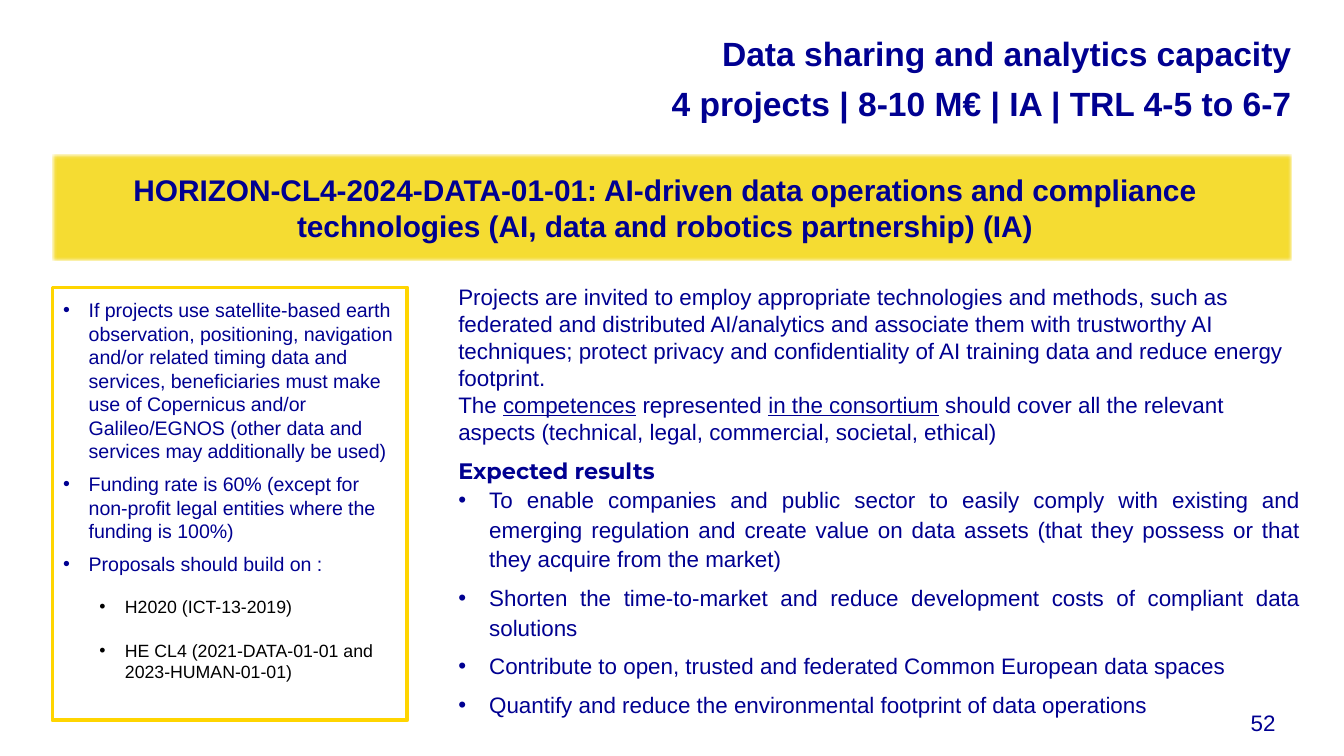
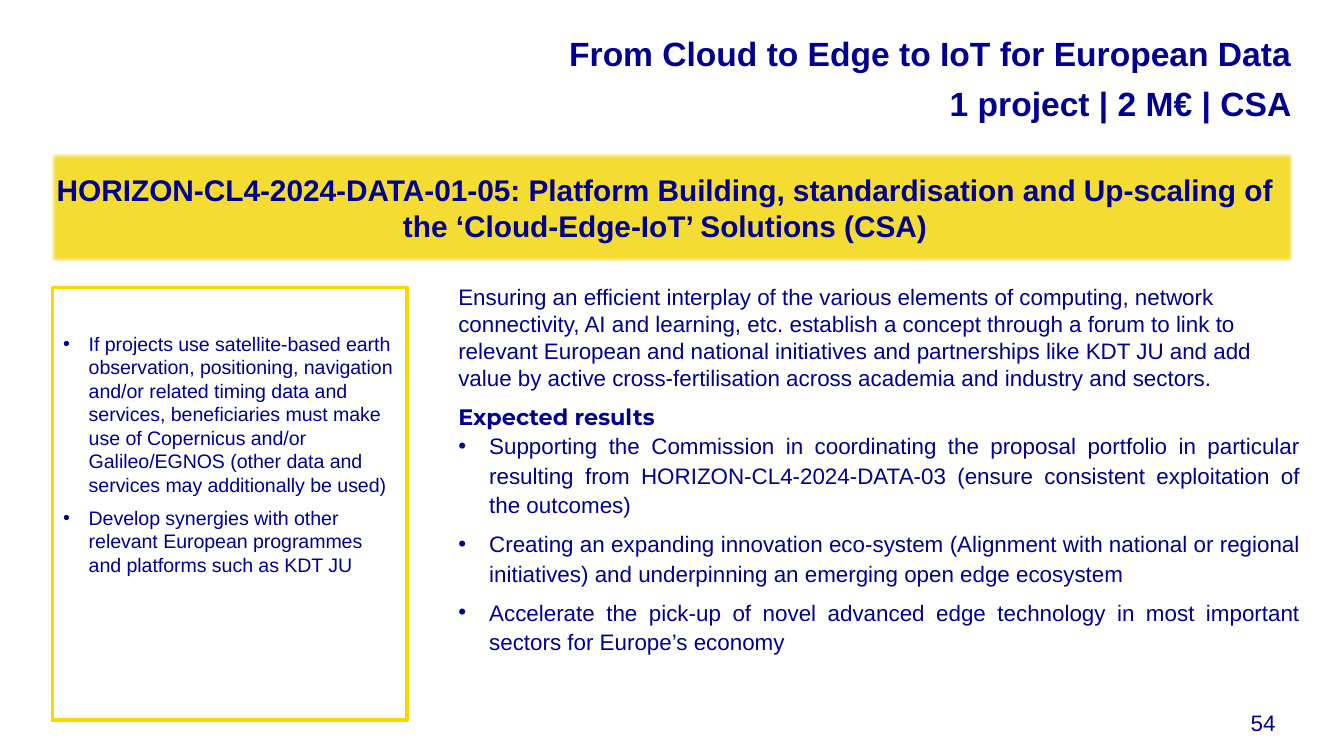
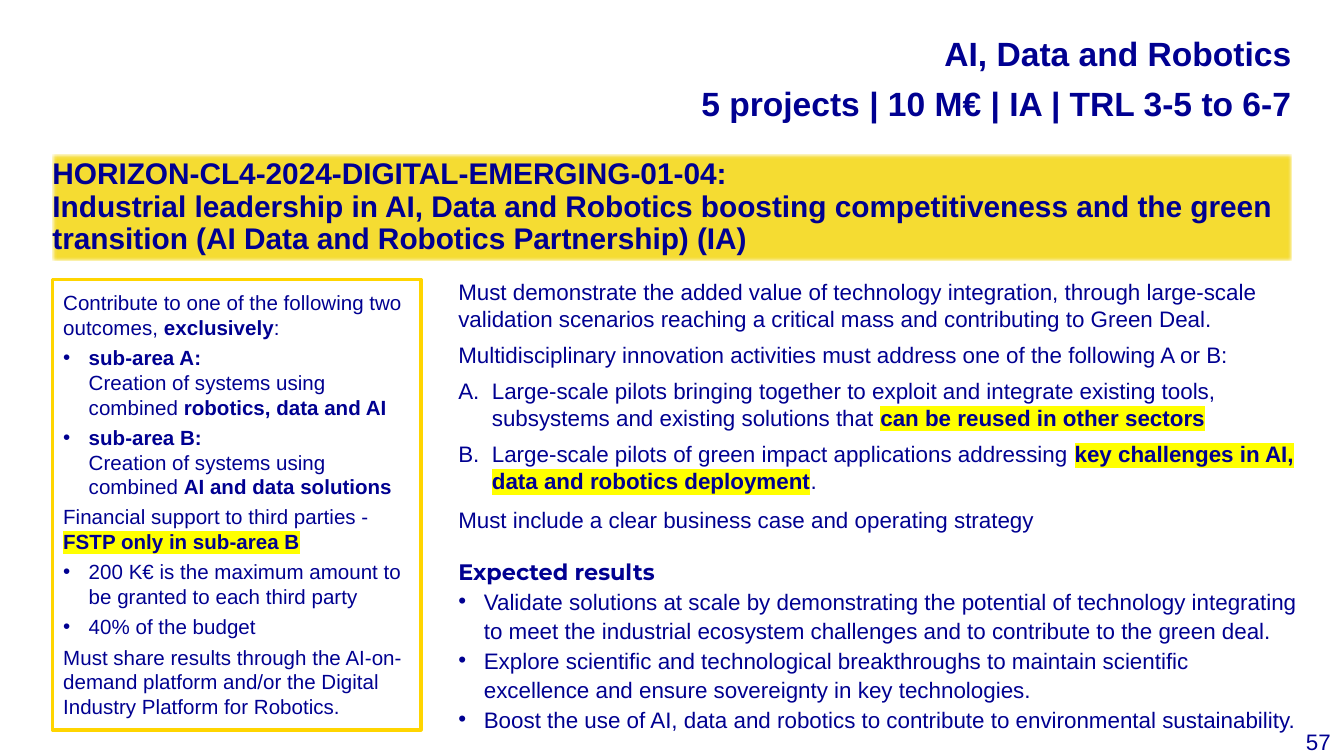
from dataclasses import dataclass

from lxml import etree
from pptx import Presentation
from pptx.dml.color import RGBColor
from pptx.enum.text import MSO_ANCHOR, MSO_AUTO_SIZE, PP_ALIGN
from pptx.oxml.ns import qn
from pptx.util import Inches, Pt

LEFT, MID, RIGHT, FULL = PP_ALIGN.LEFT, PP_ALIGN.CENTER, PP_ALIGN.RIGHT, PP_ALIGN.JUSTIFY
TOP, CENTRE = MSO_ANCHOR.TOP, MSO_ANCHOR.MIDDLE
FIXED = MSO_AUTO_SIZE.NONE

WIDE, HIGH = Inches(10), Inches(5.625)
NAVY, BLACK, BAND, GOLD, GLOW = "000091", "000000", "F5DC32", "FFD500", "FFFF00"
FONT, ACCENT = "Arial", "Montserrat"
EDGE, END, COLUMN = 3.9, 96.1, 34.1


@dataclass
class Kind:
    """Look of one type of paragraph."""
    mark: str = ""
    left: float = 0
    hang: float = 0
    before: float = 0
    after: float = 0
    line: float = 1
    align: int = LEFT
    size: float = 0
    bold: bool = False
    color: str = NAVY
    font: str = FONT
    level: int = 0


KINDS = {
    "top": Kind(after=5, align=RIGHT, bold=True),
    "band": Kind(align=MID, bold=True),
    "long": Kind(line=0.9, bold=True),
    "page": Kind(align=RIGHT),
    "lead": Kind(after=5),
    "head": Kind(line=1.1, bold=True, font=ACCENT),
    "item": Kind("•", 0.23, 0.23, after=5, line=1.1, align=FULL),
    "goal": Kind("•", 0.19, 0.19, line=1.1),
    "pick": Kind("A.", 0.25, 0.25, after=5),
    "case": Kind(after=12, line=1.1),
    "fact": Kind("•", 0.19, 0.19, after=5),
    "sub": Kind("•", 0.46, 0.19, 6, 6, size=9.5, color=BLACK, level=1),
    "note": Kind(after=3),
    "dot": Kind("•", 0.19, 0.19, after=3),
}


def paint(code):
    """Turn a hex string into a colour."""
    return RGBColor.from_string(code)


def place(shape, box):
    """Move a shape to a box given in percent of the slide."""
    x, y, w, h = box
    shape.left, shape.width = int(WIDE * x / 100), int(WIDE * w / 100)
    shape.top, shape.height = int(HIGH * y / 100), int(HIGH * h / 100)


def child(node, tag, **keys):
    """Append a drawing element to a node."""
    return etree.SubElement(node, qn("a:" + tag), keys)


def bullet(par, kind):
    """Set the indent and the bullet of a paragraph."""
    props = par._p.get_or_add_pPr()
    props.set("marL", str(Inches(kind.left)))
    props.set("indent", str(-Inches(kind.hang)))
    if kind.mark == "A.":
        child(props, "buFont", typeface="+mj-lt")
        child(props, "buAutoNum", type="alphaUcPeriod")
    elif kind.mark:
        child(props, "buFont", typeface=FONT)
        child(props, "buChar", char=kind.mark)
    else:
        child(props, "buNone")


def style(run, kind, size, look):
    """Format a run; look is b for bold, u for underline, h for highlight."""
    font = run.font
    font.size = Pt(size)
    font.bold = kind.bold or look in ("b", "h")
    font.color.rgb = paint(kind.color)
    if look == "u":
        font.underline = True
    if look == "h":
        child(child(run._r.get_or_add_rPr(), "highlight"), "srgbClr", val=GLOW)
    font.name = kind.font


def write(par, name, parts, size):
    """Fill one paragraph with its parts."""
    kind = KINDS[name]
    size = kind.size or size
    par.level, par.alignment = kind.level, kind.align
    par.line_spacing = kind.line
    par.space_before, par.space_after = Pt(kind.before), Pt(kind.after)
    bullet(par, kind)
    for part in parts:
        words, look = (part, "") if isinstance(part, str) else part
        for count, line in enumerate(words.split("\n")):
            if count:
                par.add_line_break()
                child(par._p[-1], "rPr", sz=str(int(size * 100)))
            if line:
                run = par.add_run()
                run.text = line
                style(run, kind, size, look)


def fill(shape, pars, size, anchor=TOP, pad=(0, 0, 0, 0)):
    """Write paragraphs into a shape with the given insets."""
    frame = shape.text_frame
    frame.word_wrap, frame.auto_size = True, FIXED
    frame.vertical_anchor = anchor
    (frame.margin_left, frame.margin_top,
     frame.margin_right, frame.margin_bottom) = map(Inches, pad)
    for count, (name, *parts) in enumerate(pars):
        par = frame.add_paragraph() if count else frame.paragraphs[0]
        write(par, name, parts, size)


def header(shape, lines, left):
    """Place the theme and budget lines at the top right."""
    place(shape, (left, 5.16, END - left, 10.31))
    fill(shape, [("top", line) for line in lines], 18, CENTRE)


def banner(shape, name, text):
    """Place the title on its soft-edged yellow band."""
    place(shape, (EDGE, 20.44, END - EDGE, 14.04))
    shape.fill.solid()
    shape.fill.fore_color.rgb = paint(BAND)
    child(child(shape._element.spPr, "effectLst"), "softEdge", rad="12700")
    fill(shape, [(name, text)], 16, CENTRE, (0, 0, 0.1, 0))


def panel(shape, box, pars, size, top):
    """Place the conditions in a gold frame."""
    place(shape, box)
    shape.line.color.rgb = paint(GOLD)
    shape.line.width = Pt(2)
    fill(shape, pars, size, pad=(0.08, top, 0.08, 0.08))


def detail(shape, top, pars):
    """Place the scope and the expected results."""
    place(shape, (COLUMN, top, 62.7, 57.42))
    fill(shape, pars, 12)


def number(slide, box, text):
    """Add the page number."""
    shape = slide.shapes.add_textbox(0, 0, 0, 0)
    place(shape, box)
    fill(shape, [("page", text)], 12, pad=(0, 0.05, 0.1, 0.05))


def topic(deck, lines, title, facts, scope, page, left=42.9, name="band",
          box=(EDGE, 38.04, 26.4, 57.24), size=10.5, pad=0.08, top=37.51,
          foot=(83.1, 92.98, 12.8, 6.93)):
    """Build one call topic slide."""
    slide = deck.slides.add_slide(deck.slide_layouts[4])
    holders = slide.placeholders
    banner(slide.shapes.title, name, title)
    header(holders[1], lines, left)
    panel(holders[2], box, facts, size, pad)
    detail(holders[4], top, scope)
    spare = holders[3]._element
    spare.getparent().remove(spare)
    number(slide, foot, page)


SPACE = ("fact", "If projects use satellite-based earth observation, positioning, "
         "navigation and/or related timing data and services, beneficiaries must make "
         "use of Copernicus and/or Galileo/EGNOS (other data and services may "
         "additionally be used)")
HEAD = ("head", "Expected results")


def sharing(deck):
    """Build the data sharing topic."""
    facts = [
        SPACE,
        ("fact", "Funding rate is 60% (except for non-profit legal entities where "
         "the funding is 100%)"),
        ("fact", "Proposals should build on :"),
        ("sub", "H2020 (ICT-13-2019)"),
        ("sub", "HE CL4 (2021-DATA-01-01 and 2023-HUMAN-01-01)"),
    ]
    scope = [
        ("lead", "Projects are invited to employ appropriate technologies and methods, "
         "such as federated and distributed AI/analytics and associate them with "
         "trustworthy AI techniques; protect privacy and confidentiality of AI "
         "training data and reduce energy footprint.\nThe ",
         ("competences", "u"), " represented ", ("in the consortium", "u"),
         " should cover all the relevant aspects (technical, legal, commercial, "
         "societal, ethical)"),
        HEAD,
        ("item", "To enable companies and public sector to easily comply with existing "
         "and emerging regulation and create value on data assets (that they possess "
         "or that they acquire from the market)"),
        ("item", "Shorten the time-to-market and reduce development costs of compliant "
         "data solutions"),
        ("item", "Contribute to open, trusted and federated Common European data spaces"),
        ("item", "Quantify and reduce the environmental footprint of data operations"),
    ]
    topic(deck, ["Data sharing and analytics capacity",
                 "4 projects | 8-10 M€ | IA | TRL 4-5 to 6-7"],
          "HORIZON-CL4-2024-DATA-01-01: AI-driven data operations and compliance "
          "technologies (AI, data and robotics partnership) (IA)",
          facts, scope, "52")


def cloud(deck):
    """Build the cloud to edge topic."""
    facts = [
        SPACE,
        ("fact", "Develop synergies with other relevant European programmes and "
         "platforms such as KDT JU"),
    ]
    scope = [
        ("lead", "Ensuring an efficient interplay of the various elements of computing, "
         "network connectivity, AI and learning, etc. establish a concept through a "
         "forum to link to relevant European and national initiatives and partnerships "
         "like KDT JU and add value by active cross-fertilisation across academia and "
         "industry and sectors."),
        HEAD,
        ("item", "Supporting the Commission in coordinating the proposal portfolio in "
         "particular resulting from HORIZON-CL4-2024-DATA-03 (ensure consistent "
         "exploitation of the outcomes)"),
        ("item", "Creating an expanding innovation eco-system (Alignment with national "
         "or regional initiatives) and underpinning an emerging open edge ecosystem"),
        ("item", "Accelerate the pick-up of novel advanced edge technology in most "
         "important sectors for Europe’s economy"),
    ]
    topic(deck, ["From Cloud to Edge to IoT for European Data",
                 "1 project | 2 M€ | CSA"],
          "HORIZON-CL4-2024-DATA-01-05: Platform Building, standardisation and "
          "Up-scaling of the ‘Cloud-Edge-IoT’ Solutions (CSA)",
          facts, scope, "54", left=40.5, pad=0.33)


def robots(deck):
    """Build the robotics topic."""
    facts = [
        ("note", "Contribute to one of the following two outcomes, ",
         ("exclusively", "b"), ":"),
        ("dot", ("sub-area A:\n", "b"), "Creation of systems using combined ",
         ("robotics, data and AI", "b")),
        ("dot", ("sub-area B:\n", "b"), "Creation of systems using combined ",
         ("AI and data solutions", "b")),
        ("note", "Financial support to third parties - ",
         ("FSTP only in sub-area B", "h")),
        ("dot", "200 K€ is the maximum amount to be granted to each third party"),
        ("dot", "40% of the budget"),
        ("lead", "Must share results through the AI-on-demand platform and/or the "
         "Digital Industry Platform for Robotics."),
    ]
    scope = [
        ("lead", "Must demonstrate the added value of technology integration, through "
         "large-scale validation scenarios reaching a critical mass and contributing "
         "to Green Deal."),
        ("lead", "Multidisciplinary innovation activities must address one of the "
         "following A or B:"),
        ("pick", "Large-scale pilots bringing together to exploit and integrate existing "
         "tools, subsystems and existing solutions that ",
         ("can be reused in other sectors", "h")),
        ("pick", "Large-scale pilots of green impact applications addressing ",
         ("key challenges in AI, data and robotics deployment", "h"), "."),
        ("case", "Must include a clear business case and operating strategy"),
        HEAD,
        ("goal", "Validate solutions at scale by demonstrating the potential of "
         "technology integrating to meet the industrial ecosystem challenges and to "
         "contribute to the green deal."),
        ("goal", "Explore scientific and technological breakthroughs to maintain "
         "scientific excellence and ensure sovereignty in key technologies."),
        ("goal", "Boost the use of AI, data and robotics to contribute to environmental "
         "sustainability."),
    ]
    topic(deck, ["AI, Data and Robotics", "5 projects | 10 M€ | IA | TRL 3-5 to 6-7"],
          "HORIZON-CL4-2024-DIGITAL-EMERGING-01-04:\nIndustrial leadership in AI, Data "
          "and Robotics boosting competitiveness and the green transition (AI Data and "
          "Robotics Partnership) (IA)",
          facts, scope, "57", name="long", box=(EDGE, 36.98, 27.4, 59.56), size=11,
          top=36.8, foot=(96.1, 95.47, 3.9, 4.53))


def main():
    """Build the deck and save it."""
    deck = Presentation()
    deck.slide_width, deck.slide_height = WIDE, HIGH
    for build in (sharing, cloud, robots):
        build(deck)
    deck.save("out.pptx")


if __name__ == "__main__":
    main()
